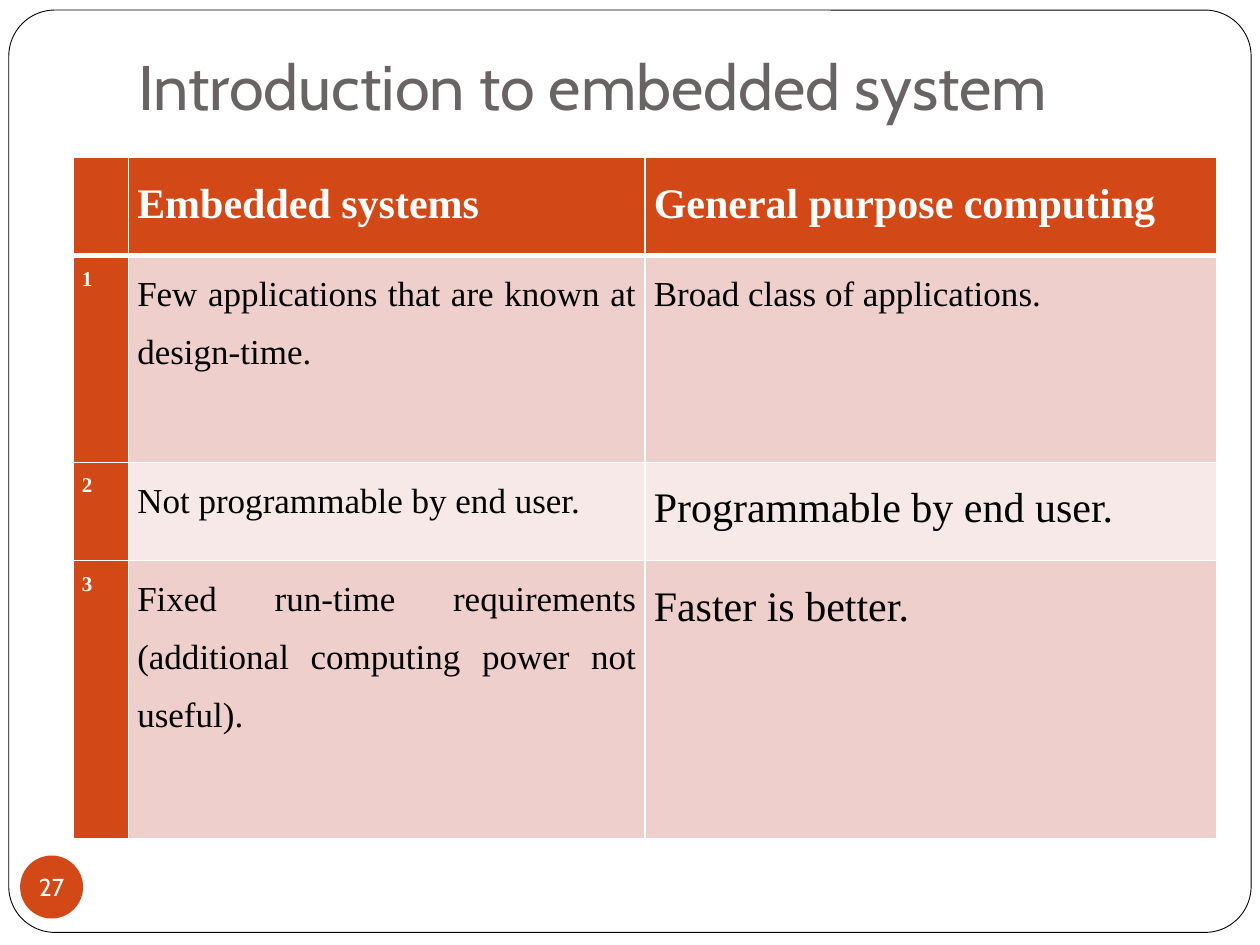
from lxml import etree
from pptx import Presentation
from pptx.dml.color import RGBColor
from pptx.enum.shapes import MSO_SHAPE
from pptx.enum.text import MSO_ANCHOR, PP_ALIGN
from pptx.oxml.ns import qn
from pptx.util import Inches, Pt

ROUND_RECT, OVAL = MSO_SHAPE.ROUNDED_RECTANGLE, MSO_SHAPE.OVAL
BOTTOM, MIDDLE = MSO_ANCHOR.BOTTOM, MSO_ANCHOR.MIDDLE
CENTER, JUSTIFY = PP_ALIGN.CENTER, PP_ALIGN.JUSTIFY

COLORS = {
    "white": "FFFFFF",
    "black": "000000",
    "title": "696464",
    "accent": "D34817",
    "band_dark": "EFCFCC",
    "band_light": "F7E9E8",
}
HEADING_FONT, TABLE_FONT = "Cabin", "Times New Roman"

COL_WIDTHS = [0.44, 4.1, 4.54]
ROW_HEIGHTS = [0.78, 1.64, 0.78, 2.21]
HEADER = ["", "Embedded systems", "General purpose computing"]
# Left text, right text, size of the right text
COMPARISONS = [
    ("Few applications that are known at design-time.",
     "Broad class of applications.", 20),
    ("Not programmable by end user.", "Programmable by end user.", 24),
    ("Fixed run-time requirements (additional computing power not useful).",
     "Faster is better.", 24),
]


def rgb(name):
    return RGBColor.from_string(COLORS[name])


def set_margins(target, left, top, right, bottom):
    target.margin_left, target.margin_top = Inches(left), Inches(top)
    target.margin_right, target.margin_bottom = Inches(right), Inches(bottom)


def write(p, text, size, font, color, bold=False):
    p.text = text
    for r in p.runs:
        r.font.size = Pt(size)
        r.font.name = font
        r.font.bold = bold
        r.font.color.rgb = rgb(color)


def add_shape(slide, kind, box, fill):
    sp = slide.shapes.add_shape(kind, *map(Inches, box))
    sp.shadow.inherit = False
    sp.fill.solid()
    sp.fill.fore_color.rgb = rgb(fill)
    sp.line.fill.background()
    return sp


def add_frame(slide):
    sp = add_shape(slide, ROUND_RECT, (0.07, 0.08, 9.86, 7.32), "white")
    sp.adjustments[0] = 0.05
    sp.line.color.rgb = rgb("black")
    sp.line.width = Pt(0.5)


def add_title(slide, text):
    sp = slide.shapes.add_textbox(*map(Inches, (1, 0.3, 8.5, 0.78)))
    tf = sp.text_frame
    tf.word_wrap = True
    tf.vertical_anchor = BOTTOM
    set_margins(tf, 0.1, 0.05, 0.1, 0.1)
    write(tf.paragraphs[0], text, 36, HEADING_FONT, "title")


def add_page_number(slide, number):
    sp = add_shape(slide, OVAL, (0.16, 6.79, 0.5, 0.5), "accent")
    tf = sp.text_frame
    tf.word_wrap = False
    tf.vertical_anchor = MIDDLE
    set_margins(tf, 0, 0, 0, 0)
    p = tf.paragraphs[0]
    p.alignment = CENTER
    write(p, number, 14, HEADING_FONT, "white")


def set_borders(cell, top, bottom):
    """Draw white borders; they must come before the fill in the cell XML."""
    tc_pr = cell._tc.get_or_add_tcPr()
    widths = {"lnL": 1, "lnR": 1, "lnT": top, "lnB": bottom}
    for i, (tag, width) in enumerate(widths.items()):
        ln = etree.Element(qn(f"a:{tag}"), w=str(Pt(width)))
        fill = etree.SubElement(ln, qn("a:solidFill"))
        etree.SubElement(fill, qn("a:srgbClr"), val=COLORS["white"])
        tc_pr.insert(i, ln)


def fill_cell(cell, text, size, color, bold, fill):
    cell.fill.solid()
    cell.fill.fore_color.rgb = rgb(fill)
    set_margins(cell, 0.07, 0, 0.07, 0)
    p = cell.text_frame.paragraphs[0]
    p.alignment = JUSTIFY
    p.line_spacing = 1.5
    write(p, text, size, TABLE_FONT, color, bold)


def add_comparison_table(slide):
    table = slide.shapes.add_table(
        len(ROW_HEIGHTS), len(COL_WIDTHS), Inches(0.58), Inches(1.25),
        Inches(sum(COL_WIDTHS)), Inches(sum(ROW_HEIGHTS))).table
    for col, width in zip(table.columns, COL_WIDTHS):
        col.width = Inches(width)
    for row, height in zip(table.rows, ROW_HEIGHTS):
        row.height = Inches(height)

    for c, text in enumerate(HEADER):
        fill_cell(table.cell(0, c), text, 24, "white", True, "accent")
    for n, (left, right, right_size) in enumerate(COMPARISONS, start=1):
        band = "band_dark" if n % 2 else "band_light"
        fill_cell(table.cell(n, 0), str(n), 12, "white", True, "accent")
        fill_cell(table.cell(n, 1), left, 20, "black", False, band)
        fill_cell(table.cell(n, 2), right, right_size, "black", False, band)

    for r, row in enumerate(table.rows):
        for cell in row.cells:
            set_borders(cell, top=3 if r == 1 else 1, bottom=3 if r == 0 else 1)


def main():
    prs = Presentation()
    prs.slide_width, prs.slide_height = Inches(10), Inches(7.5)
    slide = prs.slides.add_slide(prs.slide_layouts[6])
    add_frame(slide)
    add_title(slide, "Introduction to embedded system")
    add_page_number(slide, "27")
    add_comparison_table(slide)
    prs.save("out.pptx")


if __name__ == "__main__":
    main()
